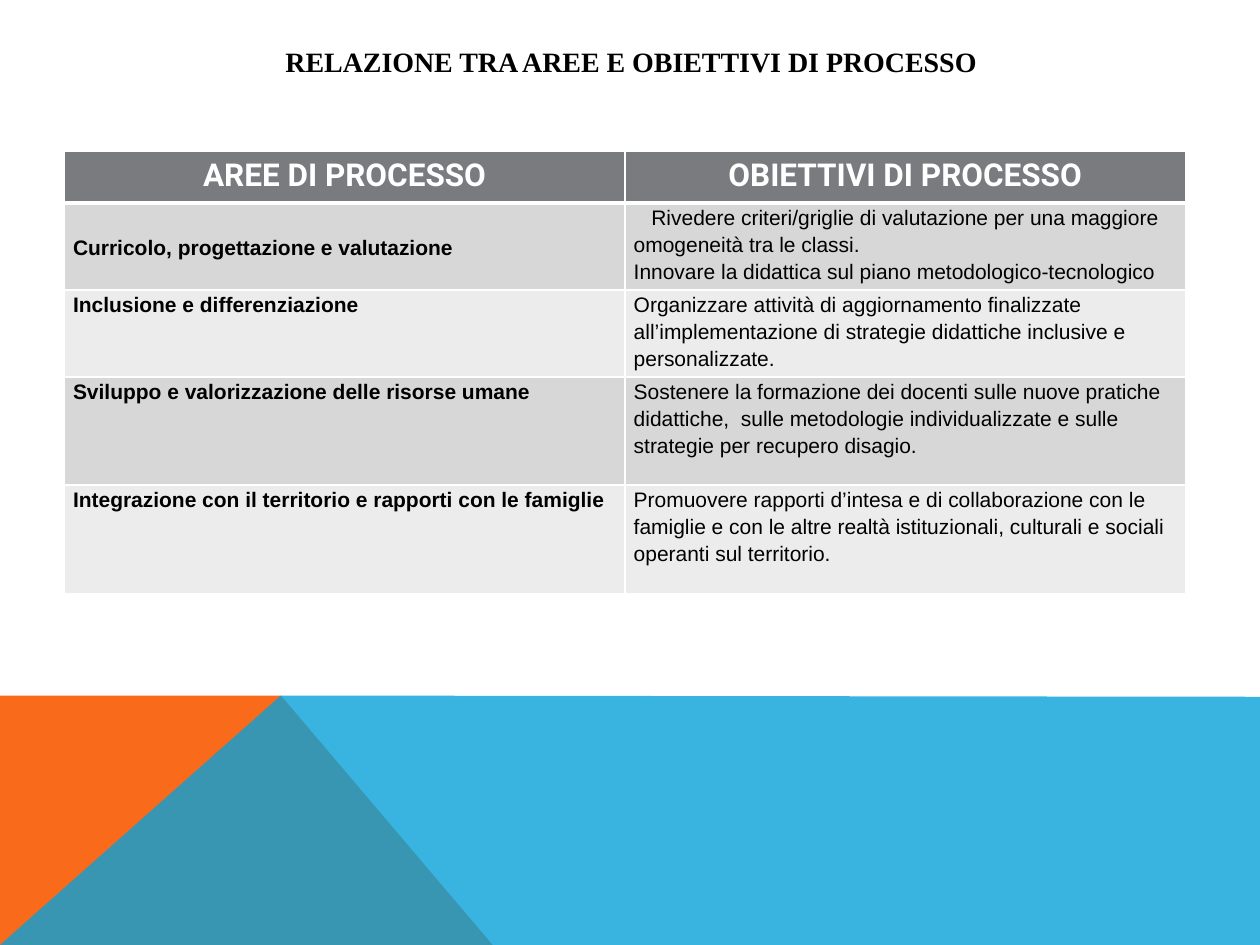
"""Build the slide relating process areas to process objectives."""
from dataclasses import dataclass

import pptx
import pptx.dml.color
import pptx.enum.text
import pptx.oxml
import pptx.oxml.ns
import pptx.util

Inches = pptx.util.Inches
Pt = pptx.util.Pt
RGBColor = pptx.dml.color.RGBColor
PP_ALIGN = pptx.enum.text.PP_ALIGN
MSO_ANCHOR = pptx.enum.text.MSO_ANCHOR
qn = pptx.oxml.ns.qn

BLACK = RGBColor(0x00, 0x00, 0x00)
WHITE = RGBColor(0xFF, 0xFF, 0xFF)
ORANGE = RGBColor(0xF9, 0x6A, 0x1B)
BLUE = RGBColor(0x08, 0xA1, 0xD9)
HEADER_GRAY = RGBColor(0x79, 0x7B, 0x7E)
BANDS = (RGBColor(0xD7, 0xD7, 0xD8), RGBColor(0xEC, 0xEC, 0xEC))


@dataclass(frozen=True)
class TextStyle:
    font: str
    size: int
    color: RGBColor = BLACK
    bold: bool = True
    align: PP_ALIGN = PP_ALIGN.LEFT
    spacing: float = 1.0


@dataclass(frozen=True)
class Area:
    name: str
    objectives: tuple[str, ...]
    height: float
    anchor: MSO_ANCHOR = MSO_ANCHOR.TOP
    indent: float = 0


@dataclass(frozen=True)
class Panel:
    points: tuple[tuple[float, float], ...]
    color: RGBColor
    opacity: int = 100


TITLE = TextStyle("Times New Roman", 16, align=PP_ALIGN.CENTER)
HEADER = TextStyle("Roboto", 18, WHITE, align=PP_ALIGN.CENTER)
AREA = TextStyle("Arial", 12, spacing=1.15)
OBJECTIVE = TextStyle("Arial", 12, bold=False, spacing=1.15)

PANELS = (
    Panel(((0, 7.5), (0, 5.52), (2.23, 5.52), (3.91, 7.5)), ORANGE),
    Panel(((0, 7.5), (2.23, 5.52), (10, 5.53), (10, 7.5)), BLUE, 80),
)
HEADINGS = ("AREE DI PROCESSO", "OBIETTIVI DI PROCESSO")
HEADER_HEIGHT = 0.41
AREAS = (
    Area("Curricolo, progettazione e valutazione",
         ("Rivedere criteri/griglie di valutazione per una maggiore omogeneità tra le classi.",
          "Innovare la didattica sul piano metodologico-tecnologico"),
         0.64, MSO_ANCHOR.MIDDLE, 0.14),
    Area("Inclusione e differenziazione",
         ("Organizzare attività di aggiornamento finalizzate all’implementazione di "
          "strategie didattiche inclusive e personalizzate.",), 0.64),
    Area("Sviluppo e valorizzazione delle risorse umane",
         ("Sostenere la formazione dei docenti sulle nuove pratiche didattiche,  sulle "
          "metodologie individualizzate e sulle strategie per recupero disagio.",), 0.86),
    Area("Integrazione con il territorio e rapporti con le famiglie",
         ("Promuovere rapporti d’intesa e di collaborazione con le famiglie e con le altre "
          "realtà istituzionali, culturali e sociali operanti sul territorio.",), 0.86),
)


def write(tf, texts: tuple[str, ...], style: TextStyle, indent: float = 0) -> None:
    """Write one paragraph per text, indenting the first line of the first."""
    for i, text in enumerate(texts):
        p = tf.add_paragraph() if i else tf.paragraphs[0]
        p.alignment = style.align
        p.line_spacing = style.spacing
        if indent and i == 0:
            p._p.get_or_add_pPr().set("indent", str(Inches(indent)))
        r = p.add_run()
        r.text = text
        r.font.name = style.font
        r.font.size = Pt(style.size)
        r.font.bold = style.bold
        r.font.color.rgb = style.color


def add_panel(s, panel: Panel) -> None:
    """Draw a filled polygon."""
    start, *rest = [(Inches(x), Inches(y)) for x, y in panel.points]
    builder = s.shapes.build_freeform(*start)
    builder.add_line_segments(rest, close=True)
    sp = builder.convert_to_shape()
    sp.shadow.inherit = False
    sp.fill.solid()
    sp.fill.fore_color.rgb = panel.color
    sp.line.fill.background()
    if panel.opacity < 100:
        color = sp._element.spPr.find(".//" + qn("a:srgbClr"))
        alpha = color.makeelement(qn("a:alpha"), {"val": str(panel.opacity * 1000)})
        color.append(alpha)


def style_cell(cell, fill: RGBColor, bottom: int = 1, top: int = 1) -> None:
    """Give a cell its fill and white borders."""
    cell.fill.solid()
    cell.fill.fore_color.rgb = fill
    tc_pr = cell._tc.get_or_add_tcPr()
    widths = {"lnL": 1, "lnR": 1, "lnT": top, "lnB": bottom}
    for i, (tag, width) in enumerate(widths.items()):
        tc_pr.insert(i, pptx.oxml.parse_xml(
            f'<a:{tag} xmlns:a="http://schemas.openxmlformats.org/drawingml/2006/main" '
            f'w="{Pt(width)}"><a:solidFill><a:srgbClr val="{WHITE}"/></a:solidFill></a:{tag}>'))


def add_areas_table(s) -> None:
    """Draw the table of areas and objectives."""
    heights = [HEADER_HEIGHT] + [area.height for area in AREAS]
    table = s.shapes.add_table(len(heights), len(HEADINGS), Inches(0.51), Inches(1.2),
                               Inches(8.9), Inches(sum(heights))).table
    for row, height in zip(table.rows, heights):
        row.height = Inches(height)
    for col, heading in enumerate(HEADINGS):
        cell = table.cell(0, col)
        style_cell(cell, HEADER_GRAY, bottom=3)
        write(cell.text_frame, (heading,), HEADER)
    for i, area in enumerate(AREAS):
        name, objectives = table.rows[i + 1].cells
        for cell in (name, objectives):
            style_cell(cell, BANDS[i % 2], top=1 if i else 3)
            cell.margin_left = cell.margin_right = Inches(0.07)
            cell.margin_top = cell.margin_bottom = 0
        name.vertical_anchor = area.anchor
        write(name.text_frame, (area.name,), AREA)
        write(objectives.text_frame, area.objectives, OBJECTIVE, area.indent)


def add_title(s, text: str) -> None:
    """Add the slide heading."""
    tf = s.shapes.add_textbox(Inches(0.9), Inches(0.35), Inches(8.22), Inches(0.6)).text_frame
    tf.word_wrap = True
    tf.margin_top = tf.margin_bottom = 0
    tf.vertical_anchor = MSO_ANCHOR.TOP
    write(tf, (text,), TITLE)


def main() -> None:
    """Build and save the presentation."""
    prs = pptx.Presentation()
    prs.slide_width, prs.slide_height = Inches(10), Inches(7.5)
    s = prs.slides.add_slide(prs.slide_layouts[6])
    for panel in PANELS:
        add_panel(s, panel)
    add_title(s, "RELAZIONE TRA AREE E OBIETTIVI DI PROCESSO")
    add_areas_table(s)
    prs.save("out.pptx")


if __name__ == "__main__":
    main()
